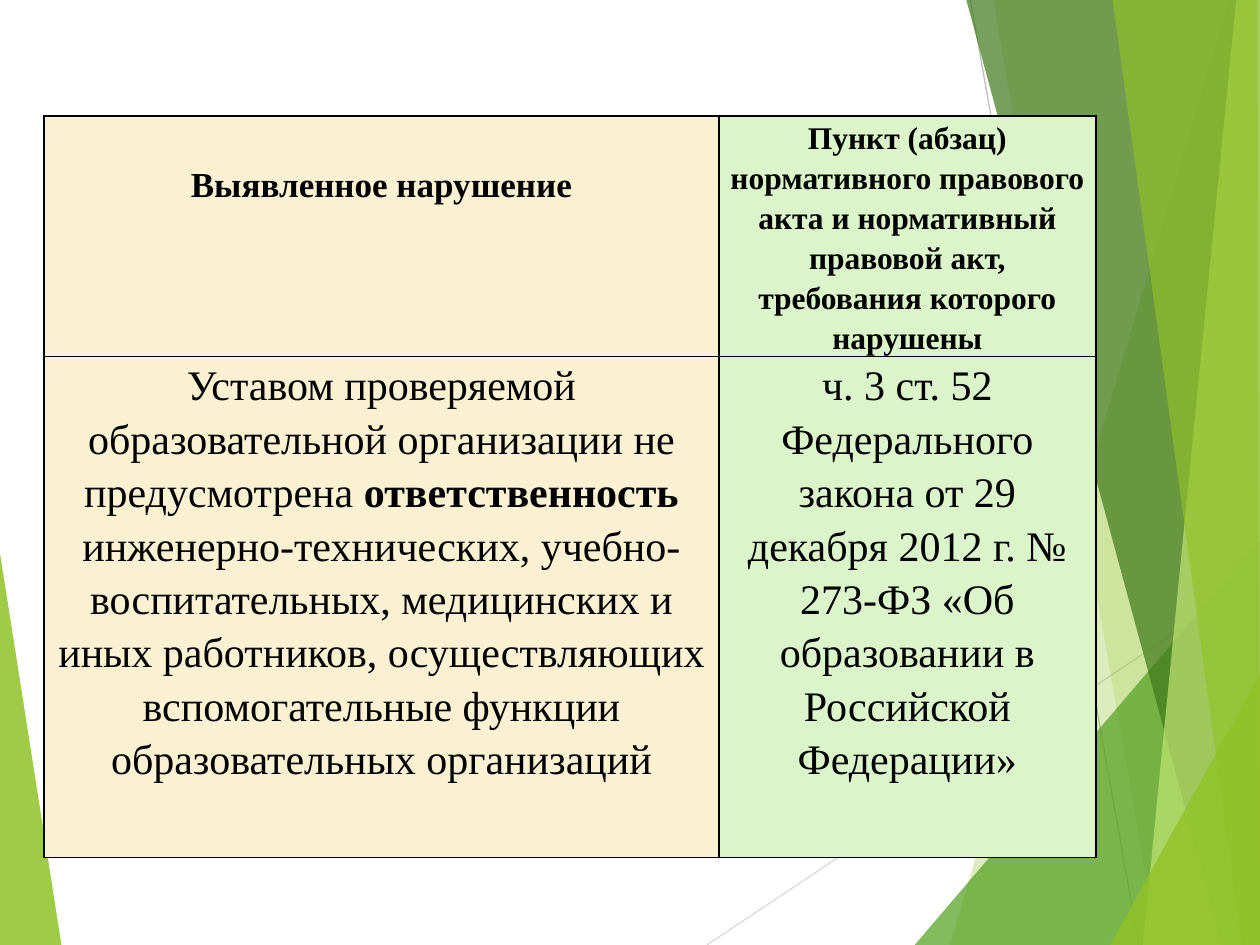
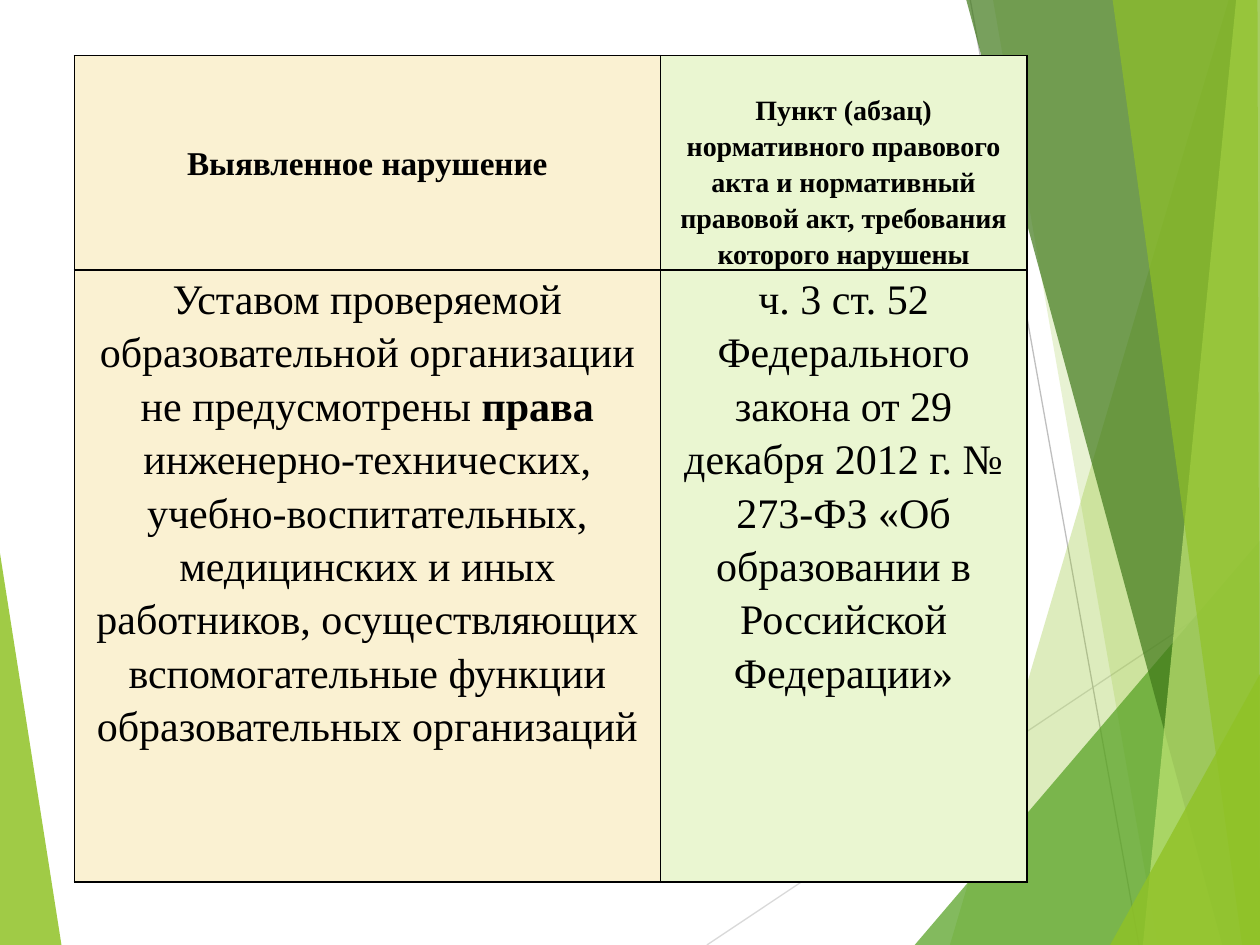
from lxml.etree import SubElement
from pptx import Presentation
from pptx.dml.color import RGBColor
from pptx.enum.shapes import MSO_CONNECTOR
from pptx.enum.text import PP_ALIGN
from pptx.oxml import parse_xml
from pptx.oxml.ns import nsdecls, qn
from pptx.util import Cm, Pt

# Shared look
WIDTH, HEIGHT = 25.4, 19.05
FONT = "Times New Roman"
BODY_SIZE = 24
LINE_SPACING = 1.15
COLOURS = {
    "lime": "90C226", "green": "54A021", "forest": "3F7819", "pale lime": "C0E474",
    "light grey": "D9D9D9", "grey": "BFBFBF", "black": "000000",
    "cream": "FAF1D2", "mint": "DBF4CA", "pistachio": "EAF6D1",
}

# Decoration: start and end of each line; outline, colour and opacity of each facet
LINES = [
    ((14.25, HEIGHT), (WIDTH, 11.61), "light grey"),
    ((19.56, 0), (22.96, HEIGHT), "grey"),
]
LEFT_FACET = ([(0, 11.15), (1.24, HEIGHT), (0, HEIGHT)], "lime", 85)
RIGHT_FACETS = [
    ([(24.77, 0), (19.15, HEIGHT), (WIDTH, HEIGHT), (WIDTH, 0)], "lime", 30),
    ([(20.02, 0), (23.34, HEIGHT), (WIDTH, HEIGHT), (WIDTH, 0)], "lime", 20),
    ([(18.44, HEIGHT), (WIDTH, 10.9), (WIDTH, HEIGHT)], "green", 72),
    ([(19.48, 0), (24.64, HEIGHT), (WIDTH, HEIGHT), (WIDTH, 0)], "forest", 70),
    ([(24.92, 0), (23.04, HEIGHT), (WIDTH, HEIGHT), (WIDTH, 0)], "pale lime", 70),
    ([(22.43, 0), (25.04, HEIGHT), (WIDTH, HEIGHT), (25.35, 0)], "lime", 65),
    ([(22.38, HEIGHT), (WIDTH, 13.59), (WIDTH, HEIGHT)], "lime", 80),
]

# Table wording
HEADINGS = [
    "Выявленное нарушение",
    "Пункт (абзац) нормативного правового акта и нормативный правовой акт, "
    "требования которого нарушены",
]
VIOLATION_START = "Уставом проверяемой образовательной организации не "
VIOLATION_END = (
    " инженерно-технических, учебно-воспитательных, медицинских и иных работников, "
    "осуществляющих вспомогательные функции образовательных организаций"
)
LEGAL_BASIS = (
    "ч. 3 ст. 52 Федерального закона от 29 декабря 2012 г. № 273-ФЗ "
    "«Об образовании в Российской Федерации»"
)

# What differs between the slides; lengths in centimetres
SLIDES = [
    {"verb": "предусмотрена ", "subject": "ответственность",
     "corner": (0.89, 2.34), "columns": (13.6, 7.6), "rows": (4.84, 10.1),
     "side margin": 0.13, "heading sizes": (20, 18), "heading drops": (0.9, 0),
     "fills": ("cream", "mint")},
    {"verb": "предусмотрены ", "subject": "права",
     "corner": (1.5, 1.12), "columns": (11.81, 7.39), "rows": (4.23, 12.33),
     "side margin": 0.15, "heading sizes": (19, 16), "heading drops": (1.71, 0.72),
     "fills": ("cream", "pistachio")},
]


def colour(name):
    return RGBColor.from_string(COLOURS[name])


def add_facet(slide, outline, fill_name, opacity):
    points = [(Cm(x), Cm(y)) for x, y in outline]
    builder = slide.shapes.build_freeform(*points[0])
    builder.add_line_segments(points[1:], close=True)
    shape = builder.convert_to_shape()
    shape.shadow.inherit = False
    shape.line.fill.background()
    shape.fill.solid()
    shape.fill.fore_color.rgb = colour(fill_name)
    for fill_colour in shape.element.iter(qn("a:srgbClr")):
        SubElement(fill_colour, qn("a:alpha")).set("val", str(opacity * 1000))
    return shape


def add_line(slide, start, end, line_name):
    ends = [Cm(length) for length in (*start, *end)]
    connector = slide.shapes.add_connector(MSO_CONNECTOR.STRAIGHT, *ends)
    connector.line.color.rgb = colour(line_name)
    connector.line.width = Pt(0.75)
    SubElement(connector.element.spPr, qn("a:effectLst"))
    return connector


def decorate_layout(layout, slide):
    """Draw the decoration on a slide, then move it to the shared layout."""
    parts = [add_facet(slide, *LEFT_FACET)]
    parts += [add_line(slide, *line) for line in LINES]
    parts += [add_facet(slide, *facet) for facet in RIGHT_FACETS]
    for part in parts:
        layout.shapes.element.append(part.element)


def add_borders(cell):
    properties = cell._tc.get_or_add_tcPr()
    for position, side in enumerate(("lnL", "lnR", "lnT", "lnB")):
        border = parse_xml(
            f'<a:{side} {nsdecls("a")} w="{Pt(1)}"><a:solidFill>'
            f'<a:srgbClr val="{COLOURS["black"]}"/></a:solidFill></a:{side}>')
        properties.insert(position, border)


def format_cell(cell, runs, size, fill_name, side_margin, drop):
    cell.margin_left = cell.margin_right = Cm(side_margin)
    cell.margin_top, cell.margin_bottom = Cm(drop), 0
    cell.fill.solid()
    cell.fill.fore_color.rgb = colour(fill_name)
    add_borders(cell)
    paragraph = cell.text_frame.paragraphs[0]
    paragraph.alignment = PP_ALIGN.CENTER
    paragraph.line_spacing = LINE_SPACING
    for text, bold in runs:
        run = paragraph.add_run()
        run.text = text
        run.font.name = FONT
        run.font.size = Pt(size)
        run.font.bold = bold
        run.font.color.rgb = colour("black")


def add_violation_table(slide, content):
    columns, rows = content["columns"], content["rows"]
    lengths = (*content["corner"], sum(columns), sum(rows))
    table = slide.shapes.add_table(
        len(rows), len(columns), *[Cm(length) for length in lengths]).table
    table.first_row = table.horz_banding = False
    for row, height in zip(table.rows, rows):
        row.height = Cm(height)

    violation = [(VIOLATION_START + content["verb"], False),
                 (content["subject"], True), (VIOLATION_END, False)]
    bodies = [violation, [(LEGAL_BASIS, False)]]
    for index, (heading, body) in enumerate(zip(HEADINGS, bodies)):
        table.columns[index].width = Cm(columns[index])
        fill_name, margin = content["fills"][index], content["side margin"]
        format_cell(table.cell(0, index), [(heading, True)],
                    content["heading sizes"][index], fill_name, margin,
                    content["heading drops"][index])
        format_cell(table.cell(1, index), body, BODY_SIZE, fill_name, margin, 0)


def main():
    presentation = Presentation()
    presentation.slide_width, presentation.slide_height = Cm(WIDTH), Cm(HEIGHT)
    layout = presentation.slide_layouts[6]  # blank: the slides have no title
    slides = [presentation.slides.add_slide(layout) for _ in SLIDES]
    decorate_layout(layout, slides[0])
    for slide, content in zip(slides, SLIDES):
        add_violation_table(slide, content)
    presentation.save("out.pptx")


if __name__ == "__main__":
    main()
